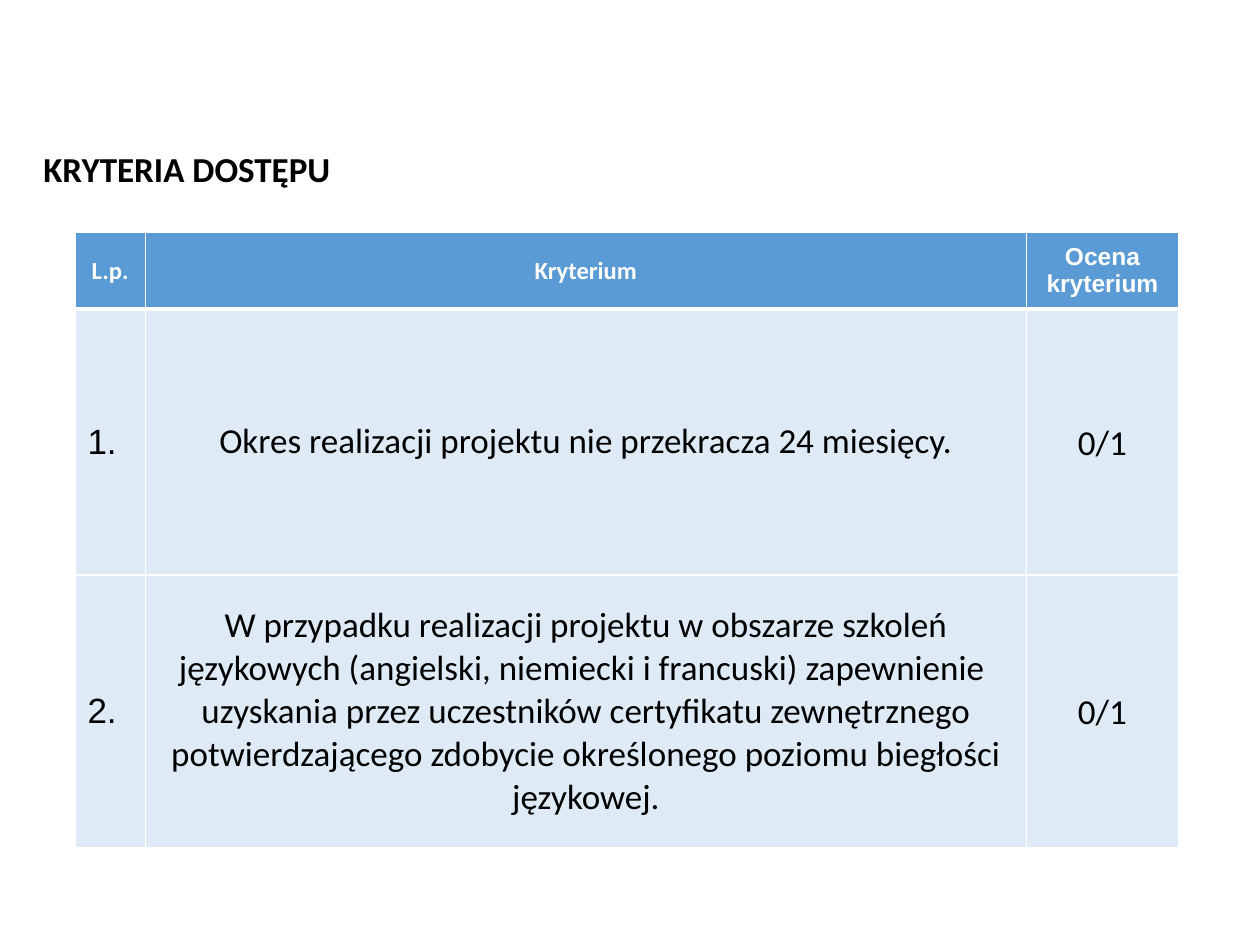
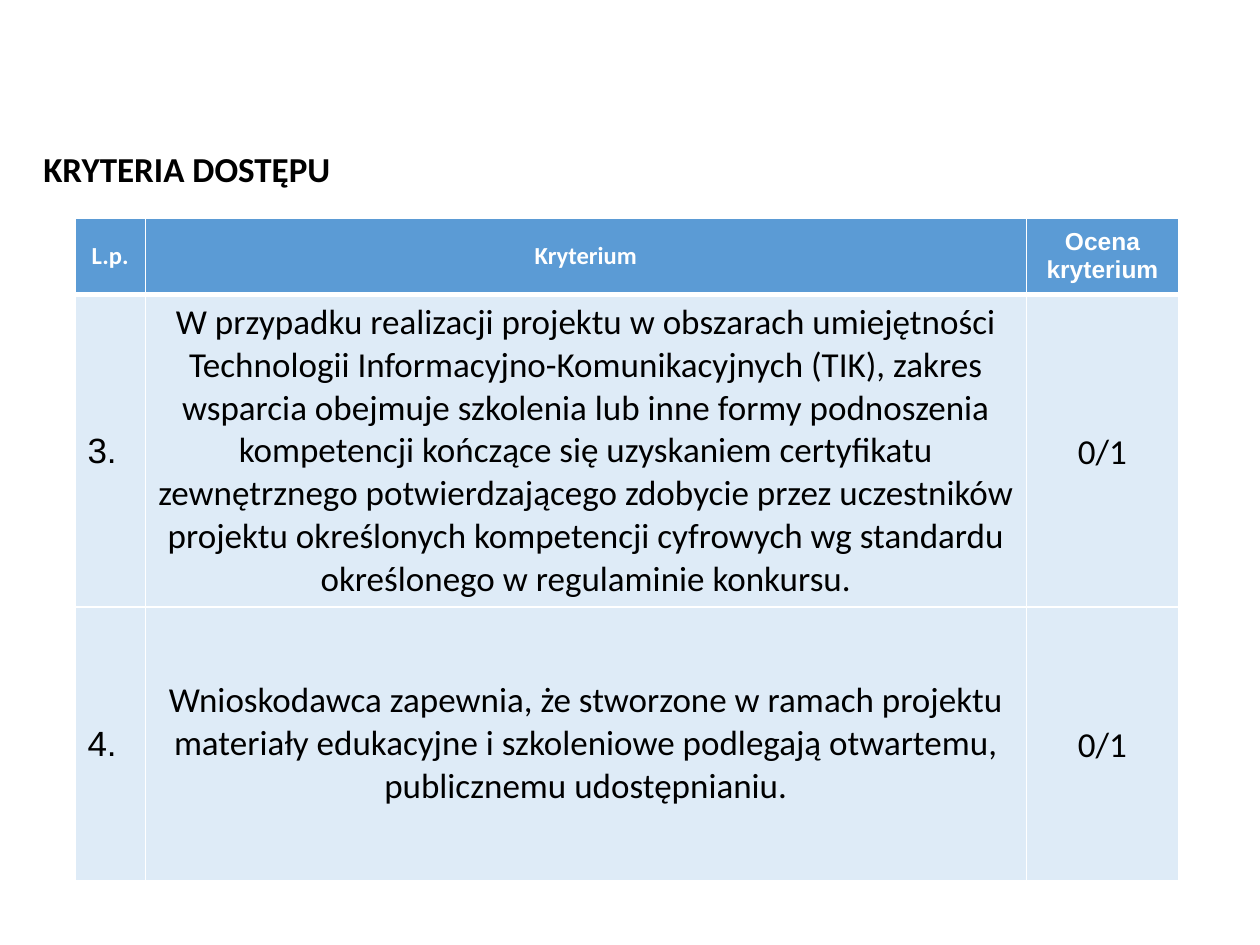
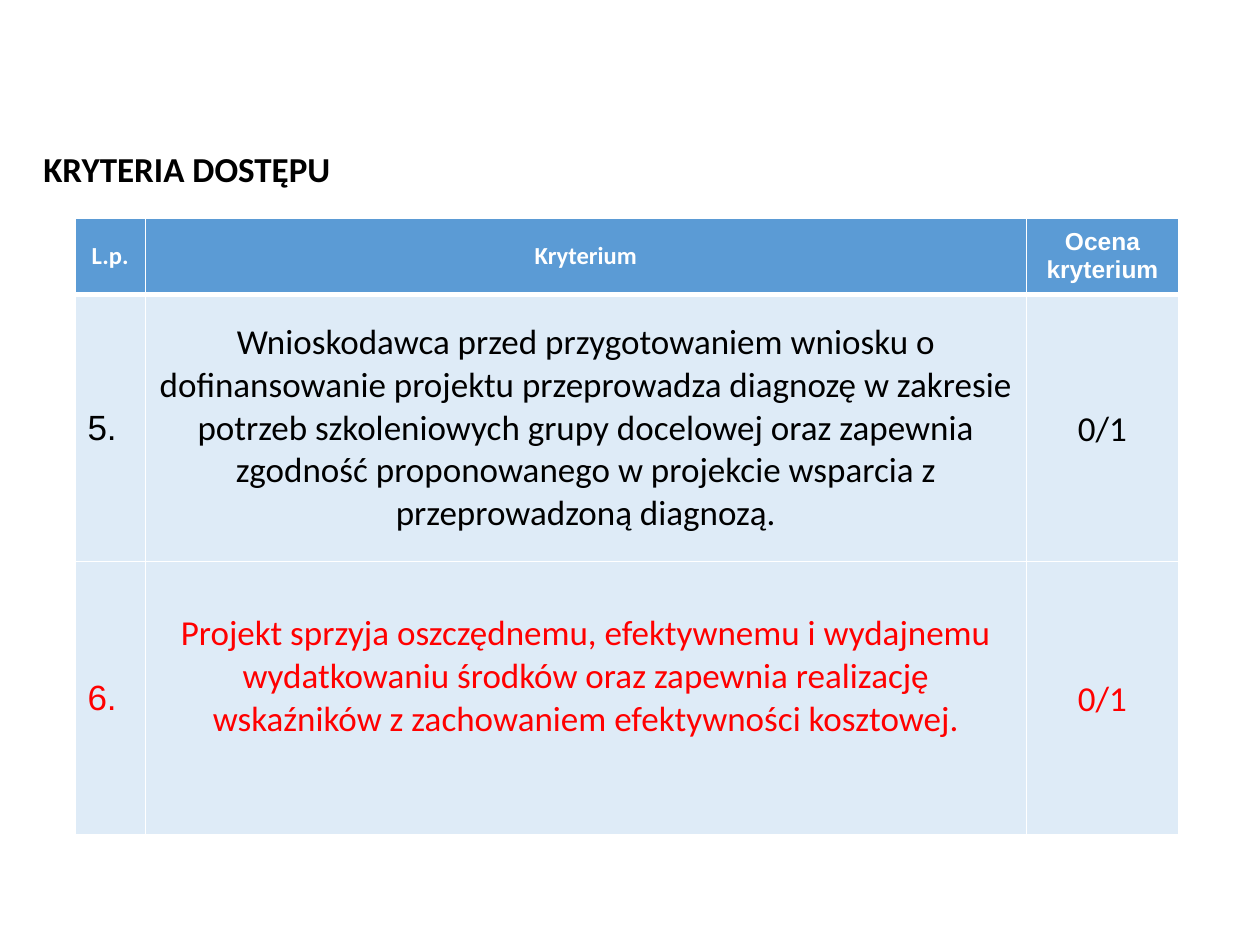
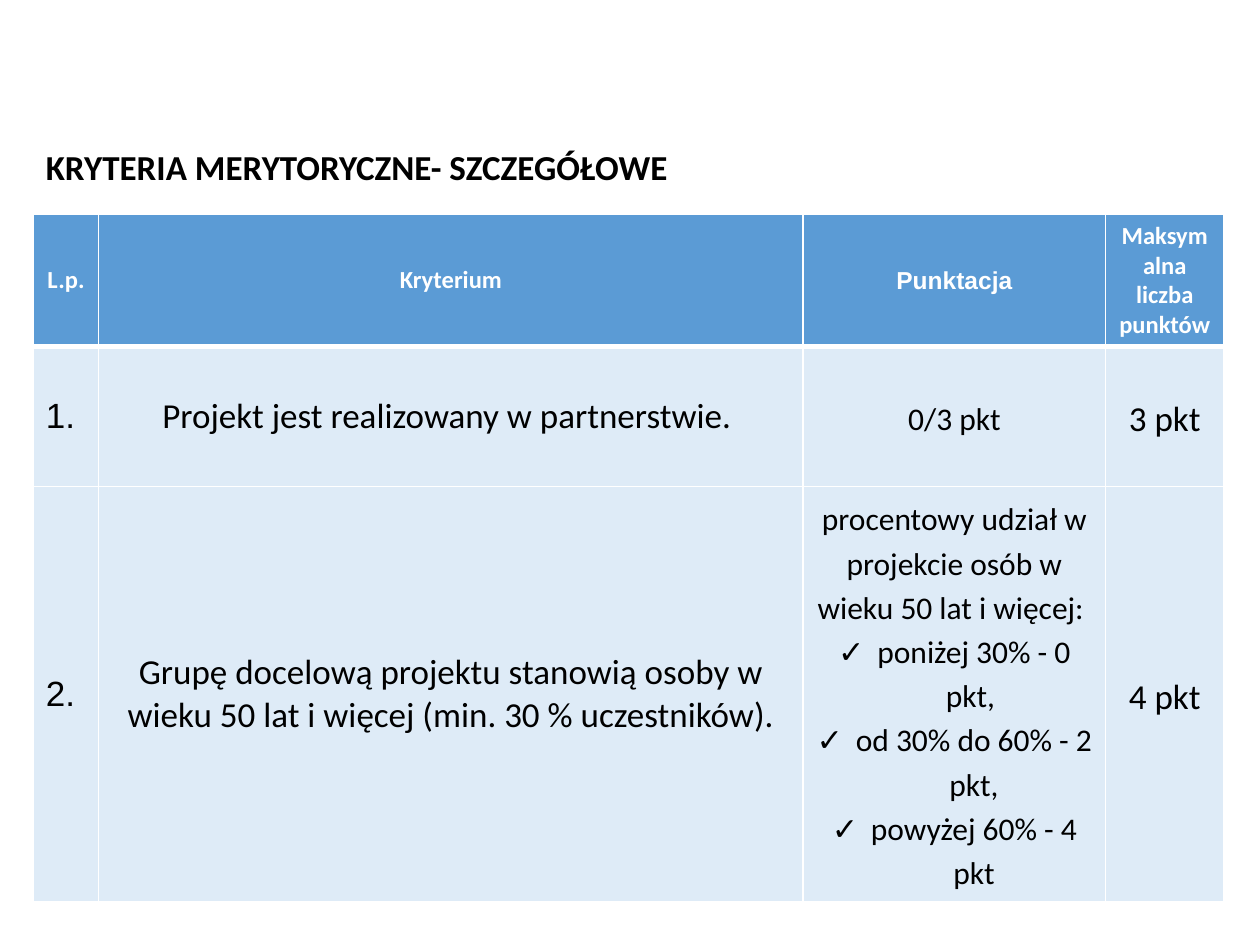
from dataclasses import dataclass

from lxml.etree import SubElement
from pptx import Presentation
from pptx.dml.color import RGBColor as Rgb
from pptx.enum.text import MSO_ANCHOR as Anchor, MSO_AUTO_SIZE as AutoSize, PP_ALIGN as Align
from pptx.oxml import parse_xml
from pptx.oxml.ns import nsdecls, qn
from pptx.util import Cm, Pt


@dataclass(frozen=True)
class Theme:
    """Colours, fonts and type sizes shared by all slides."""
    header_fill: Rgb = Rgb(0x5B, 0x9B, 0xD5)
    body_fill: Rgb = Rgb(0xDE, 0xEB, 0xF7)
    white: Rgb = Rgb(0xFF, 0xFF, 0xFF)
    black: Rgb = Rgb(0x00, 0x00, 0x00)
    red: Rgb = Rgb(0xFF, 0x00, 0x00)
    main_font: str = "Calibri"
    number_font: str = "Arial"
    title_size: Pt = Pt(20)
    header_size: Pt = Pt(14)
    body_size: Pt = Pt(20)
    points_size: Pt = Pt(18)


@dataclass(frozen=True)
class Column:
    """Width, heading and text style of one table column, in centimetres and points."""
    heading: str
    width: float
    heading_font: str = Theme.main_font
    font: str = Theme.main_font
    size: Pt = Theme.body_size
    align: Align = Align.CENTER
    spacing: float = 1.0
    side_margin: float = 0.25
    tight: bool = False
    checklist: bool = False


@dataclass(frozen=True)
class Row:
    """Height, cell texts and optional emphasis of one table row."""
    height: float
    texts: tuple
    color: Rgb = Theme.black
    extra_bottom: float = 0


THEME = Theme()
HEADER_HEIGHT = 1.55
ACCESS_COLUMNS = (
    Column("L.p.", 1.42, font=THEME.number_font, align=Align.LEFT),
    Column("Kryterium", 17.76),
    Column("Ocena kryterium", 3.07, heading_font=THEME.number_font, spacing=1.07,
           side_margin=0.1, tight=True),
)
MERIT_COLUMNS = (
    Column("L.p.", 1.32, font=THEME.number_font, align=Align.LEFT),
    Column("Kryterium", 14.2),
    Column("Punktacja", 6.1, heading_font=THEME.number_font, size=THEME.points_size,
           spacing=1.15, side_margin=0.23, tight=True, checklist=True),
    Column("Maksymalna liczba punktów", 2.38, spacing=1.15, side_margin=0.1, tight=True),
)
ACCESS_SLIDES = (
    (4.68, (
        Row(5.36, ("1.", "Okres realizacji projektu nie przekracza 24 miesięcy.", "0/1")),
        Row(5.5, ("2.", "W przypadku realizacji projektu w obszarze szkoleń językowych "
                  "(angielski, niemiecki i francuski) zapewnienie \n"
                  "uzyskania przez uczestników certyfikatu zewnętrznego potwierdzającego "
                  "zdobycie określonego poziomu biegłości językowej.", "0/1")),
    )),
    (4.39, (
        Row(6.3, ("3.", "W przypadku realizacji projektu w obszarach umiejętności Technologii "
                  "Informacyjno-Komunikacyjnych (TIK), zakres wsparcia obejmuje szkolenia lub "
                  "inne formy podnoszenia kompetencji kończące się uzyskaniem certyfikatu "
                  "zewnętrznego potwierdzającego zdobycie przez uczestników projektu "
                  "określonych kompetencji cyfrowych wg standardu określonego w regulaminie "
                  "konkursu.", "0/1")),
        Row(5.51, ("4.", "Wnioskodawca zapewnia, że stworzone w ramach projektu materiały "
                   "edukacyjne i szkoleniowe podlegają otwartemu, publicznemu "
                   "udostępnianiu.", "0/1")),
    )),
    (4.39, (
        Row(5.38, ("5.", "Wnioskodawca przed przygotowaniem wniosku o dofinansowanie projektu "
                   "przeprowadza diagnozę w zakresie potrzeb szkoleniowych grupy docelowej oraz "
                   "zapewnia zgodność proponowanego w projekcie wsparcia z przeprowadzoną "
                   "diagnozą.", "0/1")),
        Row(5.51, ("6.", "Projekt sprzyja oszczędnemu, efektywnemu i wydajnemu wydatkowaniu "
                   "środków oraz zapewnia realizację wskaźników z zachowaniem efektywności "
                   "kosztowej.", "0/1"), color=THEME.red, extra_bottom=0.87),
    )),
)
MERIT_ROWS = (
    Row(2.82, ("1.", "Projekt jest realizowany w partnerstwie. ", "0/3 pkt", "3 pkt")),
    Row(8.36, ("2.", "Grupę docelową projektu stanowią osoby w wieku 50 lat i więcej "
               "(min. 30 % uczestników).",
               "procentowy udział w projekcie osób w wieku 50 lat i więcej: \n"
               "poniżej 30% - 0 pkt, \nod 30% do 60% - 2 pkt,\npowyżej 60% - 4 pkt",
               "4 pkt")),
)


def format_paragraph(para, font, size, color, bold=False, align=Align.LEFT, spacing=1.0):
    """Align a paragraph and style its runs."""
    para.alignment = align
    para.line_spacing = spacing
    for span in para.runs:
        span.font.name = font
        span.font.size = size
        span.font.bold = bold
        span.font.color.rgb = color


def add_check_mark(para):
    """Give a paragraph a hanging check mark bullet."""
    properties = para._p.get_or_add_pPr()
    properties.set("marL", str(Cm(0.79)))
    properties.set("indent", str(-Cm(0.79)))
    SubElement(properties, qn("a:buFont")).set("typeface", THEME.number_font)
    SubElement(properties, qn("a:buChar")).set("char", "✓")


def set_borders(cell, top, bottom):
    """Draw white borders, with the top and bottom widths in points."""
    properties = cell._tc.get_or_add_tcPr()
    widths = {"lnL": 1, "lnR": 1, "lnT": top, "lnB": bottom}
    for position, (side, width) in enumerate(widths.items()):
        line = parse_xml(
            f'<a:{side} {nsdecls("a")} w="{Pt(width)}"><a:solidFill>'
            f'<a:srgbClr val="{THEME.white}"/></a:solidFill></a:{side}>')
        properties.insert(position, line)


def fill_cell(cell, text, fill, top=1, bottom=1):
    """Put text in a cell, centre it vertically and paint fill and borders."""
    cell.text_frame.text = text
    cell.vertical_anchor = Anchor.MIDDLE
    cell.fill.solid()
    cell.fill.fore_color.rgb = fill
    set_borders(cell, top, bottom)


def fill_header(cell, column):
    """Write a column heading."""
    fill_cell(cell, column.heading, THEME.header_fill, bottom=3)
    format_paragraph(cell.text_frame.paragraphs[0], column.heading_font, THEME.header_size,
                     THEME.white, bold=True, align=Align.CENTER)


def fill_body(cell, column, row, text, top):
    """Write a body cell in the style of its column."""
    fill_cell(cell, text, THEME.body_fill, top=top)
    if column.tight:
        cell.margin_left = cell.margin_right = Cm(column.side_margin)
        cell.margin_top = cell.margin_bottom = Cm(0.1)
    elif row.extra_bottom and column.align == Align.CENTER:
        cell.margin_bottom = Cm(0.13 + row.extra_bottom)
    for index, para in enumerate(cell.text_frame.paragraphs):
        if column.checklist and index:
            add_check_mark(para)
        format_paragraph(para, column.font, column.size, row.color,
                         align=column.align, spacing=column.spacing)


def add_criteria_table(page, left, top, columns, rows, header_height):
    """Add a table of criteria with a header row."""
    heights = [header_height] + [row.height for row in rows]
    width = sum(column.width for column in columns)
    table = page.shapes.add_table(len(heights), len(columns), Cm(left), Cm(top),
                                  Cm(width), Cm(sum(heights))).table
    for index, height in enumerate(heights):
        table.rows[index].height = Cm(height)
    for index, column in enumerate(columns):
        table.columns[index].width = Cm(column.width)
        fill_header(table.cell(0, index), column)
        for number, row in enumerate(rows, 1):
            fill_body(table.cell(number, index), column, row, row.texts[index],
                      top=3 if number == 1 else 1)


def add_page(deck, title, left, top, width):
    """Add a slide whose title placeholder is placed and formatted."""
    page = deck.slides.add_slide(deck.slide_layouts[5])
    box = page.shapes.title
    box.left, box.top, box.width, box.height = Cm(left), Cm(top), Cm(width), Cm(1.12)
    frame = box.text_frame
    frame.text = title
    frame.word_wrap = True
    frame.auto_size = AutoSize.SHAPE_TO_FIT_TEXT
    frame.vertical_anchor = Anchor.MIDDLE
    format_paragraph(frame.paragraphs[0], THEME.main_font, THEME.title_size, THEME.black, bold=True)
    return page


def main():
    """Build the deck of criteria slides."""
    deck = Presentation()
    deck.slide_width, deck.slide_height = Cm(25.4), Cm(19.05)
    for top, rows in ACCESS_SLIDES:
        page = add_page(deck, "KRYTERIA DOSTĘPU", 0.62, 2.84, 9.4)
        add_criteria_table(page, 1.51, top, ACCESS_COLUMNS, rows, HEADER_HEIGHT)
    page = add_page(deck, "KRYTERIA MERYTORYCZNE- SZCZEGÓŁOWE", 0.67, 2.79, 13.3)
    add_criteria_table(page, 0.67, 4.32, MERIT_COLUMNS, MERIT_ROWS, 2.67)
    deck.save("out.pptx")


if __name__ == "__main__":
    main()
